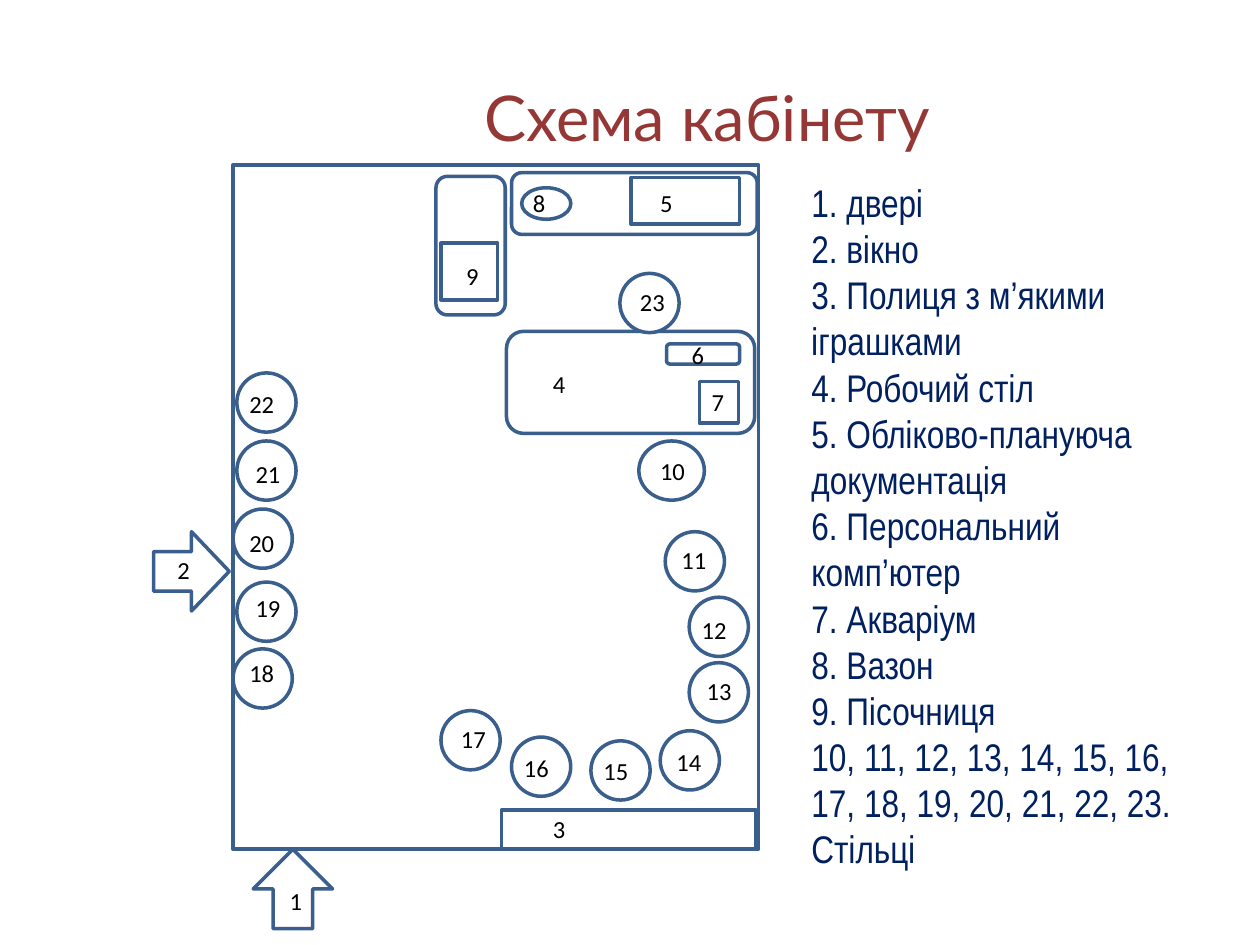
import pptx
import pptx.dml.color
import pptx.enum.shapes
import pptx.enum.text
import pptx.util
from lxml import etree

Inches = pptx.util.Inches
Pt = pptx.util.Pt
RGBColor = pptx.dml.color.RGBColor
MSO_SHAPE = pptx.enum.shapes.MSO_SHAPE
MSO_ANCHOR = pptx.enum.text.MSO_ANCHOR
MSO_AUTO_SIZE = pptx.enum.text.MSO_AUTO_SIZE
PP_ALIGN = pptx.enum.text.PP_ALIGN

COLORS = {"title": "953735", "legend": "002060", "label": "000000",
          "fill": "FFFFFF", "line": "3A5F8C"}
SEAT = 0.47


def format_run(r, size, font, color):
    r.font.size = Pt(size)
    r.font.name = font
    r.font.color.rgb = RGBColor.from_string(COLORS[color])


def add_outline(slide, kind, x, y, w, h):
    sp = slide.shapes.add_shape(kind, Inches(x), Inches(y), Inches(w), Inches(h))
    sp.shadow.inherit = False
    sp.fill.solid()
    sp.fill.fore_color.rgb = RGBColor.from_string(COLORS["fill"])
    sp.line.color.rgb = RGBColor.from_string(COLORS["line"])
    sp.line.width = Pt(2)


prs = pptx.Presentation()
prs.slide_width, prs.slide_height = Inches(10), Inches(7.5)
s = prs.slides.add_slide(prs.slide_layouts[1])

title = s.shapes.title
title.left, title.top = Inches(1.72), Inches(0.3)
title.width, title.height = Inches(7.78), Inches(1.25)
tf = title.text_frame
tf.text = "Схема кабінету"
tf.auto_size = MSO_AUTO_SIZE.NONE
tf.vertical_anchor = MSO_ANCHOR.MIDDLE
p = tf.paragraphs[0]
p.alignment = PP_ALIGN.CENTER
format_run(p.runs[0], 36, "Lato", "title")

legend = s.placeholders[1]
legend.left, legend.top = Inches(6.34), Inches(1.37)
legend.width, legend.height = Inches(3.39), Inches(5.6)
items = [
    "1. двері",
    "2. вікно",
    "3. Полиця з м’якими іграшками",
    "4. Робочий стіл",
    "5. Обліково-плануюча документація",
    "6. Персональний комп’ютер",
    "7. Акваріум",
    "8. Вазон",
    "9. Пісочниця",
    "10, 11, 12, 13, 14, 15, 16, 17, 18, 19, 20, 21, 22, 23. Стільці",
]
tf = legend.text_frame
tf.text = "\n".join(items)
tf.auto_size = MSO_AUTO_SIZE.NONE
tf.vertical_anchor = MSO_ANCHOR.TOP
for p in tf.paragraphs:
    pPr = p._p.get_or_add_pPr()
    pPr.set("marL", "0")
    pPr.set("indent", "0")
    etree.SubElement(pPr, pptx.oxml.ns.qn("a:buNone"))
    p.space_before = Pt(0)
    format_run(p.runs[0], 22, "Arial Narrow", "legend")

furniture = [
    (MSO_SHAPE.RECTANGLE, 1.85, 1.31, 4.17, 5.43),
    (MSO_SHAPE.UP_ARROW, 2.01, 6.74, 0.63, 0.63),
    (MSO_SHAPE.RIGHT_ARROW, 1.22, 4.22, 0.6, 0.63),
    (MSO_SHAPE.RECTANGLE, 3.98, 6.43, 2.02, 0.31),
    (MSO_SHAPE.ROUNDED_RECTANGLE, 4.02, 2.63, 1.97, 0.81),
    (MSO_SHAPE.ROUNDED_RECTANGLE, 4.06, 1.37, 1.95, 0.49),
    (MSO_SHAPE.ROUNDED_RECTANGLE, 3.46, 1.4, 0.55, 1.1),
    (MSO_SHAPE.RECTANGLE, 5.01, 1.41, 0.86, 0.37),
    (MSO_SHAPE.ROUNDED_RECTANGLE, 5.29, 2.73, 0.58, 0.16),
    (MSO_SHAPE.RECTANGLE, 5.55, 3.03, 0.31, 0.33),
    (MSO_SHAPE.OVAL, 4.14, 1.49, 0.39, 0.25),
    (MSO_SHAPE.RECTANGLE, 3.5, 1.93, 0.45, 0.45),
    (MSO_SHAPE.OVAL, 5.07, 3.5, 0.52, SEAT),
]
for kind, x, y, w, h in furniture:
    add_outline(s, kind, x, y, w, h)

seats = [
    (5.28, 4.22), (5.47, 4.74), (5.47, 5.26), (5.24, 5.8), (4.69, 5.88),
    (4.06, 5.85), (3.5, 5.64), (1.85, 5.15), (1.88, 4.62), (1.85, 4.04),
    (1.88, 3.5), (1.88, 2.96), (4.92, 2.17),
]
for x, y in seats:
    add_outline(s, MSO_SHAPE.OVAL, x, y, SEAT, SEAT)

labels = [
    (2.2, 6.98), (1.31, 4.36), (4.29, 6.41), (4.29, 2.88), (5.14, 1.44),
    (5.39, 2.65), (5.55, 3.02), (4.13, 1.44), (3.6, 2.02), (5.14, 3.57),
    (5.31, 4.28), (5.47, 4.83), (5.51, 5.32), (5.27, 5.88), (4.69, 5.95),
    (4.06, 5.93), (3.56, 5.7), (1.88, 5.17), (1.93, 4.66), (1.88, 4.14),
    (1.93, 3.59), (1.88, 3.04), (4.98, 2.23),
]
for number, (x, y) in enumerate(labels, 1):
    width = 0.35 if number < 10 else 0.48
    sp = s.shapes.add_textbox(Inches(x), Inches(y), Inches(width), Inches(0.34))
    tf = sp.text_frame
    tf.word_wrap = True
    tf.text = str(number)
    format_run(tf.paragraphs[0].runs[0], 14, "Calibri", "label")

prs.save("out.pptx")
